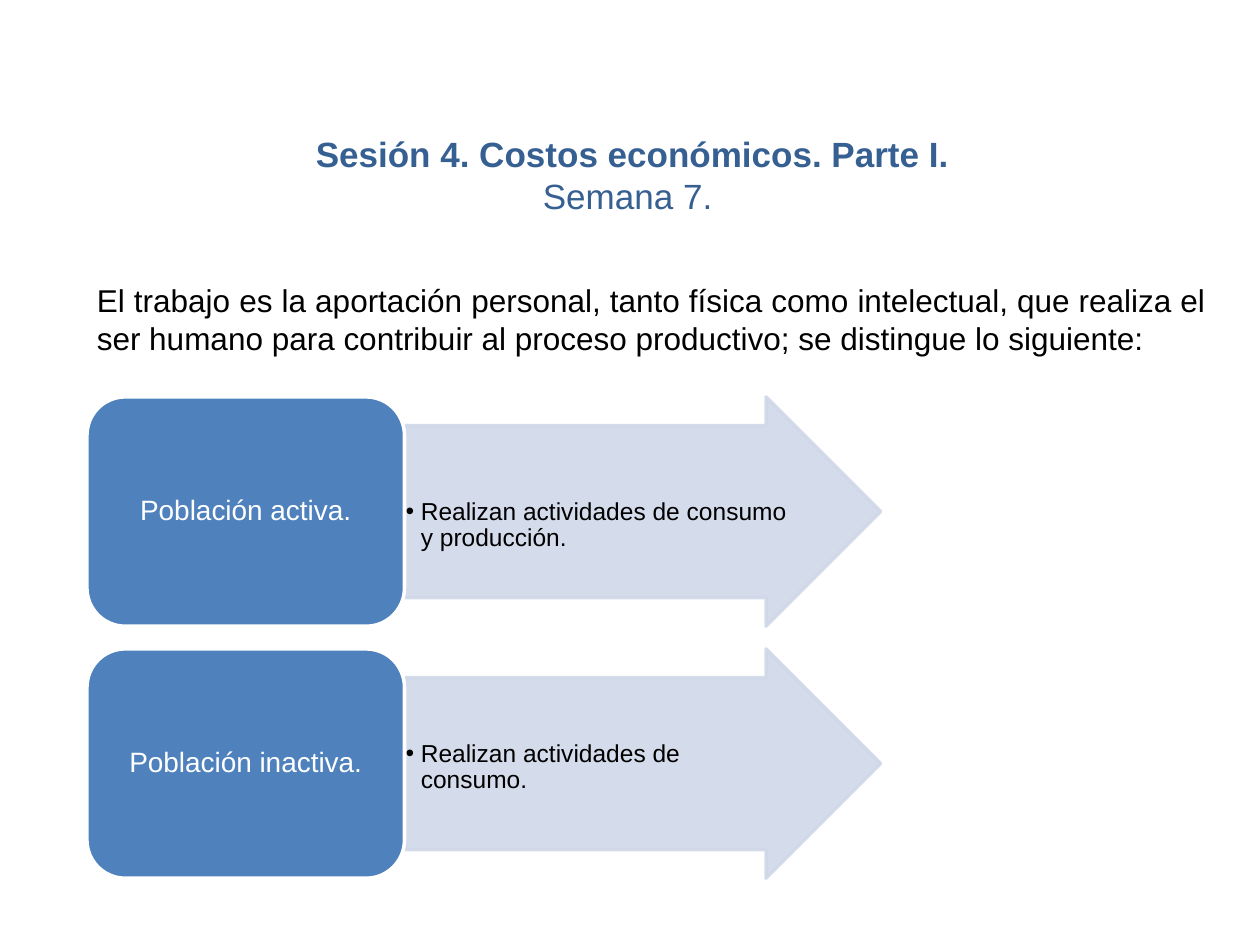
from lxml import etree
from pptx import Presentation
from pptx import util as u
from pptx.dml.color import RGBColor
from pptx.enum import shapes, text
from pptx.oxml.ns import qn

PX = 9144
FONT = "Arial"
BLUE, PALE, WHITE, BLACK, NAVY = "4F81BD", "D0D8E8", "FFFFFF", "000000", "376092"
ROWS = [
    ("Población activa.", "Realizan actividades de consumo y producción.", 58),
    ("Población inactiva.", "Realizan actividades de consumo.", 50),
]
ROW_TOP, ROW_STEP, ROW_HEIGHT = 315, 200, 182
LABEL_LEFT, LABEL_WIDTH, ARROW_WIDTH = 69, 252, 378


def px(*values):
    return [u.Emu(v * PX) for v in values]


def color(value):
    return RGBColor.from_string(value)


def set_frame(tf, anchor, margins):
    tf.word_wrap = True
    tf.auto_size = text.MSO_AUTO_SIZE.NONE
    tf.vertical_anchor = anchor
    tf.margin_left, tf.margin_top, tf.margin_right, tf.margin_bottom = px(*margins)


def add_run(p, words, size, fill, bold=False):
    r = p.add_run()
    r.text = words
    r.font.name, r.font.size, r.font.bold = FONT, u.Pt(size), bold
    r.font.color.rgb = color(fill)


def add_shape(s, kind, box, fill, line):
    sp = s.shapes.add_shape(kind, *px(*box))
    sp.shadow.inherit = False
    sp.fill.solid()
    sp.fill.fore_color.rgb = color(fill)
    sp.line.color.rgb = color(line)
    sp.line.width = u.Pt(2)
    return sp


def add_bullet(p, indent):
    pPr = p._p.get_or_add_pPr()
    pPr.set("marL", str(indent * PX))
    pPr.set("indent", str(-indent * PX))
    etree.SubElement(pPr, qn("a:buFont"), typeface=FONT)
    etree.SubElement(pPr, qn("a:buChar"), char="•")


def add_title(s):
    sp = s.shapes.title
    sp.left, sp.top, sp.width, sp.height = px(52, 76, 900, 125)
    set_frame(sp.text_frame, text.MSO_ANCHOR.MIDDLE, (10, 5, 10, 5))
    p = sp.text_frame.paragraphs[0]
    p.alignment = text.PP_ALIGN.CENTER
    add_run(p, "Sesión 4. Costos económicos. Parte I.", 20, NAVY, True)
    p.add_line_break()
    add_run(p, "Semana 7. ", 20, NAVY)


def add_intro(s):
    tf = s.shapes.add_textbox(*px(67, 218, 900, 80)).text_frame
    set_frame(tf, text.MSO_ANCHOR.TOP, (10, 5, 10, 5))
    p = tf.paragraphs[0]
    p.alignment = text.PP_ALIGN.JUSTIFY
    add_run(p, "El trabajo es la aportación personal, tanto física como intelectual, "
               "que realiza el ser humano para contribuir al proceso productivo; "
               "se distingue lo siguiente:", 18, BLACK)


def add_arrow(s, left, top):
    sp = add_shape(s, shapes.MSO_SHAPE.RIGHT_ARROW,
                   (left, top, ARROW_WIDTH, ROW_HEIGHT), PALE, PALE)
    sp.adjustments[0], sp.adjustments[1] = 0.75, 0.5
    for clr in sp._element.spPr.iter(qn("a:srgbClr")):
        etree.SubElement(clr, qn("a:alpha"), val="90000")


def add_detail(s, words, left, top, inset):
    tf = s.shapes.add_textbox(*px(left, top + 23, 308, 136)).text_frame
    set_frame(tf, text.MSO_ANCHOR.TOP, (1, inset, 1, 1))
    p = tf.paragraphs[0]
    add_bullet(p, 12)
    p.line_spacing = 0.9
    add_run(p, words, 14, BLACK)


def add_label(s, words, top):
    sp = add_shape(s, shapes.MSO_SHAPE.ROUNDED_RECTANGLE,
                   (LABEL_LEFT, top, LABEL_WIDTH, ROW_HEIGHT), BLUE, WHITE)
    set_frame(sp.text_frame, text.MSO_ANCHOR.MIDDLE, (7, 3, 7, 3))
    p = sp.text_frame.paragraphs[0]
    p.alignment = text.PP_ALIGN.CENTER
    p.line_spacing = 0.9
    add_run(p, words, 16, WHITE)


def main():
    prs = Presentation()
    prs.slide_width, prs.slide_height = px(1000, 750)
    s = prs.slides.add_slide(prs.slide_layouts[5])
    add_title(s)
    add_intro(s)
    arrow_left = LABEL_LEFT + LABEL_WIDTH
    for i, (label, detail, inset) in enumerate(ROWS):
        top = ROW_TOP + i * ROW_STEP
        add_arrow(s, arrow_left, top)
        add_detail(s, detail, arrow_left, top, inset)
        add_label(s, label, top)
    prs.save("out.pptx")


if __name__ == "__main__":
    main()
